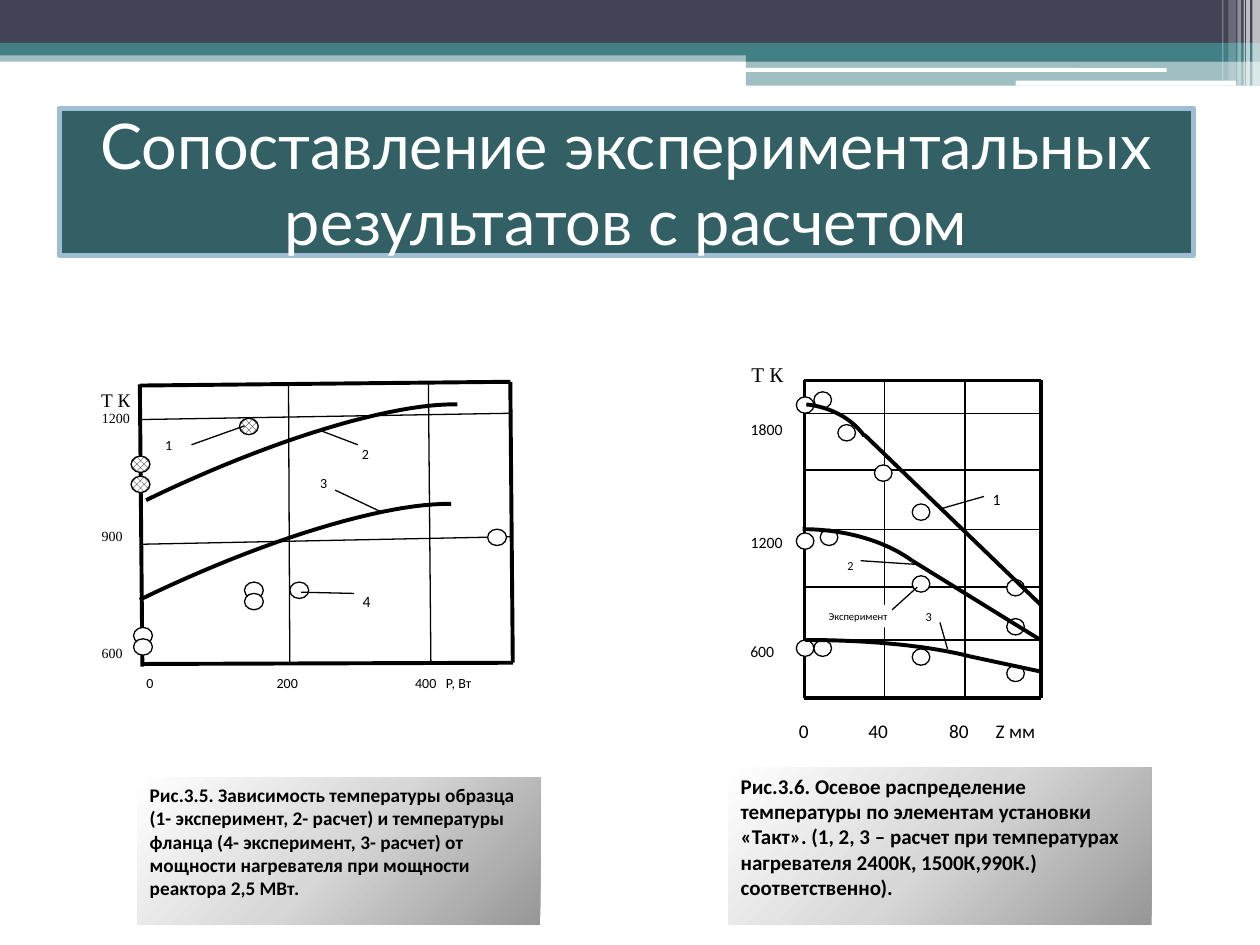
from copy import deepcopy
from pptx import Presentation, util as u
from pptx.dml import color
from pptx.enum import dml, shapes, text
from pptx.oxml import ns, xmlchemy as xc

STEP = u.Inches(0.1)
KIND = shapes.MSO_SHAPE
SERIF, SANS = "Times New Roman", "Calibri"
MID = text.MSO_ANCHOR.MIDDLE
MARGIN = ("margin_left", "margin_right", "margin_top", "margin_bottom")

LEFT = dict(
    thick=[(4.1, 1.5, 4.3, 23.9), (4.3, 23.7, 33.7, 23.6),
           (4.1, 1.6, 33.5, 1.3), (33.5, 1.3, 33.7, 23.6)],
    thin=[(4.1, 4.3, 33.5, 3.8), (4.1, 14.2, 33.5, 13.6),
          (16, 23.6, 15.9, 1.5), (27.2, 23.6, 27, 1.3)],
    curves=[[(4.6 - dx, 10.7 + dy), (14.5 - dx, 5.9 + dy),
             (24.1 - dx, 3 + dy), (29.3 - dx, 3.1 + dy)]
            for dx, dy in [(0, 0), (0.5, 7.9)]],
    tails=[], size=(1.5, 1.3),
    hatched=[(12, 4.2), (3.4, 7.2), (3.4, 8.8)],
    hollow=[(3.6, 20.8), (3.6, 21.7), (12.4, 17.2), (12.4, 18.1),
            (16, 17.2), (31.7, 13)],
    labels=[("1", 8, 5.1, 5.2, 2.6, 2.3), ("2", 8, 20.8, 5.8, 2.4, 2.4),
            ("3", 8, 17.5, 8.1, 2.4, 2.5), ("4", 9, 20.8, 17.2, 2.6, 3)],
    leads=[(12.4, 4.8, 8.2, 6.3), (18.5, 5.2, 21.4, 6.3),
           (19.6, 9.9, 23.2, 11.6), (21.1, 18.1, 16.9, 18)],
    ticks=[("Т К", 11, SERIF, 2.2, 2.7), ("1200", 8, SERIF, 2.2, 4.2),
           ("900", 8, SERIF, 1.9, 13.5), ("600", 8, SERIF, 1.9, 22.8),
           ("0", 8, SANS, 4.9, 25.2), ("200", 8, SANS, 15.8, 25.2),
           ("400", 8, SANS, 26.8, 25.2), ("Р, Вт", 8, SANS, 29.4, 25.2)])

RIGHT = dict(
    thick=[(x, 2.2, x, 27.4) for x in (4.85, 23.6)]
    + [(4.85, y, 23.6, y) for y in (2.2, 27.4)],
    thin=[(x, 2.2, x, 27.4) for x in (11.2, 17.6)]
    + [(4.85, y, 23.6, y) for y in (4.8, 9.3, 14, 18.6, 22.8)],
    curves=[[(5, 4.1), (6.9, 4.3), (8.6, 5.2), (9.6, 6.6)],
            [(4.7, 14), (8, 14), (11.2, 14.9), (13.4, 16.5)],
            [(4.9, 22.8), (9.7, 22.8), (14.4, 23.2), (18, 24.1)]],
    tails=[(9.6, 6.5, 23.6, 20), (13.4, 16.5, 23.6, 22.8),
           (18, 24.1, 23.6, 25.3)],
    size=(1.4, 1.3), hatched=[],
    hollow=[(4.2, 3.5), (5.6, 3.1), (7.5, 5.7), (10.4, 8.9), (13.4, 12),
            (20.9, 18), (4.2, 14.3), (6.1, 14), (13.4, 17.7), (20.9, 21.1),
            (4.2, 22.8), (5.6, 22.8), (13.4, 23.5), (20.9, 24.8)],
    labels=[("Эксперимент", 6, 5.8, 20, 6.6, 1.8), ("2", 7, 7.5, 15.9, 2, 2),
            ("3", 7, 13.8, 20, 1.8, 1.8), ("1", 9, 19.1, 10.6, 2, 2)],
    leads=[(19.1, 11.4, 15.6, 12.4), (9.3, 16.5, 13.8, 16.8),
           (15.6, 21.4, 16.2, 23.5), (13.8, 18.6, 11.8, 20.4)],
    ticks=[("Т К", 12, SERIF, 1.9, 1.7), ("1800", 9, SANS, 1.85, 6.1),
           ("1200", 9, SANS, 1.85, 15), ("600", 9, SANS, 1.5, 23.7),
           ("0", 11, SANS, 4.8, 30), ("40", 11, SANS, 10.7, 30),
           ("80", 11, SANS, 17.1, 30), ("Z мм", 11, SANS, 21.6, 30)])


def grid(*nums):
    """Turn grid units into slide lengths."""
    return [round(n * STEP) for n in nums]


def hue(code):
    """Read a hex string as a colour."""
    return color.RGBColor.from_string(code)


def block(page, box, tone=None, kind=KIND.RECTANGLE, edge=None, width=0.75):
    """Add a preset shape with an optional fill and outline."""
    item = page.shapes.add_shape(kind, *grid(*box))
    item.shadow.inherit = False
    if tone:
        item.fill.solid()
        item.fill.fore_color.rgb = hue(tone)
    else:
        item.fill.background()
    if edge:
        item.line.color.rgb = hue(edge)
        item.line.width = u.Pt(width)
    else:
        item.line.fill.background()
    return item


def write(item, words, align, form, frame):
    """Set one paragraph in a shape."""
    body = item.text_frame
    for key, val in frame.items():
        setattr(body, key, val)
    para = body.paragraphs[0]
    para.alignment = align
    run = para.add_run()
    run.text = words
    for key, val in form.items():
        if key == "tone":
            run.font.color.rgb = hue(val)
        else:
            setattr(run.font, key, val)


def note(page, box, words, size, face, tone=None):
    """Add a short centred label."""
    frame = dict.fromkeys(MARGIN, 0) | dict(word_wrap=False, vertical_anchor=MID)
    form = dict(size=u.Pt(size), name=face, tone="000000")
    write(block(page, box, tone), words, text.PP_ALIGN.CENTER, form, frame)


def line(page, box, ends, width):
    """Draw a straight black line inside a box."""
    x, y = box[:2]
    a, b, c, d = ends
    item = page.shapes.add_connector(
        shapes.MSO_CONNECTOR.STRAIGHT, *grid(x + a, y + b, x + c, y + d))
    item.line.color.rgb = hue("000000")
    item.line.width = u.Pt(width)
    item._element.spPr.append(xc.OxmlElement("a:effectLst"))


def curve(page, box, knots, count=24):
    """Draw a cubic curve inside a box."""
    spots = []
    for n in range(count + 1):
        t = n / count
        mix = ((1 - t) ** 3, 3 * t * (1 - t) ** 2, 3 * t * t * (1 - t), t ** 3)
        spots.append(grid(*(box[k] + sum(m * p[k] for m, p in zip(mix, knots))
                            for k in (0, 1))))
    pen = page.shapes.build_freeform(*spots[0])
    pen.add_line_segments(spots[1:], close=False)
    item = pen.convert_to_shape()
    item.shadow.inherit = False
    item.fill.background()
    item.line.color.rgb = hue("000000")
    item.line.width = u.Pt(2.25)


def plot(page, box, data):
    """Draw a plot with its grid, curves, points and labels."""
    x, y = box[:2]
    for key, width in (("thin", 0.75), ("thick", 2.25)):
        for ends in data[key]:
            line(page, box, ends, width)
    for key in ("hatched", "hollow"):
        for a, b in data[key]:
            dot = block(page, (x + a, y + b, *data["size"]), "FFFFFF",
                        KIND.OVAL, "000000")
            if key == "hatched":
                dot.fill.patterned()
                dot.fill.pattern = dml.MSO_PATTERN.from_xml("openDmnd")
                dot.fill.fore_color.rgb = hue("000000")
                dot.fill.back_color.rgb = hue("FFFFFF")
    for knots in data["curves"]:
        curve(page, box, knots)
    for ends in data["tails"]:
        line(page, box, ends, 2.25)
    for words, size, a, b, w, h in data["labels"]:
        note(page, (x + a, y + b, w, h), words, size, SANS, "FFFFFF")
    for ends in data["leads"]:
        line(page, box, ends, 0.75)
    for words, size, face, a, b in data["ticks"]:
        note(page, (x + a - 2, y + b - 1, 4, 2), words, size, face)


def header(page, box):
    """Draw the band across the top of the slide."""
    x, y, wide, _ = box
    for a, b, w, h, tone, share, kind in [
            (0, 4, wide, 0.9, "438086", 50, KIND.RECTANGLE),
            (0, 0, wide, 3.4, "424456", 100, KIND.RECTANGLE),
            (0, 3.4, wide, 1, "438086", 100, KIND.RECTANGLE),
            (59.2, 3.9, 40.8, 1, "438086", 100, KIND.RECTANGLE),
            (59.2, 4.8, 40.8, 2, "438086", 50, KIND.RECTANGLE),
            (59.1, 5.4, 33.5, 0.3, "FFFFFF", 100, KIND.ROUNDED_RECTANGLE),
            (80.6, 6.4, 17.5, 0.4, "FFFFFF", 100, KIND.ROUNDED_RECTANGLE),
            *((a, 0, w, h, "FFFFFF", share, KIND.RECTANGLE)
              for a, w, h, share in [
                  (99.4, 0.6, 6.8, 65), (98.9, 0.3, 6.8, 65),
                  (98.7, 0.1, 6.8, 60), (98.2, 0.3, 6.8, 40),
                  (97.5, 0.6, 6.4, 20), (97, 0.1, 6.4, 30)])]:
        item = block(page, (x + a, y + b, w, h), tone, kind)
        if share < 100:
            alpha = xc.OxmlElement("a:alpha")
            alpha.set("val", str(share * 1000))
            item._element.spPr.find(".//" + ns.qn("a:srgbClr")).append(alpha)


def title(page, box, words):
    """Place the framed heading."""
    item = block(page, box, "326065", edge="9DBED3", width=3)
    form = dict(size=u.Pt(36), name="Lato", tone="FFFFFF")
    write(item, words, text.PP_ALIGN.CENTER, form,
          dict(word_wrap=True, vertical_anchor=MID))


def caption(page, box, words, size):
    """Place a bold caption on a grey gradient."""
    item = block(page, box)
    item.fill.gradient()
    item.fill.gradient_angle = 135
    stops = item._element.spPr.find(".//" + ns.qn("a:gsLst"))
    stops.insert(1, deepcopy(stops[0]))
    tones = [(0, "979797"), (0.5, "D7D7D7"), (1, "FFFFFF")]
    for stop, (spot, tone) in zip(item.fill.gradient_stops, tones):
        stop.position = spot
        stop.color.rgb = hue(tone)
    form = dict(size=u.Pt(size), name=SANS, bold=True, tone="000000")
    write(item, words, text.PP_ALIGN.LEFT, form,
          dict(word_wrap=True, vertical_anchor=text.MSO_ANCHOR.TOP))


def main():
    """Build and save the slide."""
    deck = Presentation()
    deck.slide_width, deck.slide_height = grid(100, 75)
    page = deck.slides.add_slide(deck.slide_layouts[6])
    header(page, (0, 0, 100, 6.8))
    title(page, (4.7, 8.6, 90, 11.7),
          "Сопоставление экспериментальных результатов с расчетом")
    plot(page, (7, 29, 34, 26), LEFT)
    plot(page, (59, 28, 27, 31), RIGHT)
    caption(page, (57.8, 60.9, 33.6, 12.5),
            "Рис.3.6. Осевое распределение температуры по элементам установки "
            "«Такт». (1, 2, 3 – расчет при температурах нагревателя "
            "2400К, 1500К,990К.) соответственно).", 12)
    caption(page, (10.9, 61.7, 32, 11.7),
            "Рис.3.5. Зависимость температуры образца (1- эксперимент, "
            "2- расчет) и температуры фланца (4- эксперимент, 3- расчет) от "
            "мощности нагревателя при мощности реактора 2,5 МВт.", 11)
    deck.save("out.pptx")


if __name__ == "__main__":
    main()
